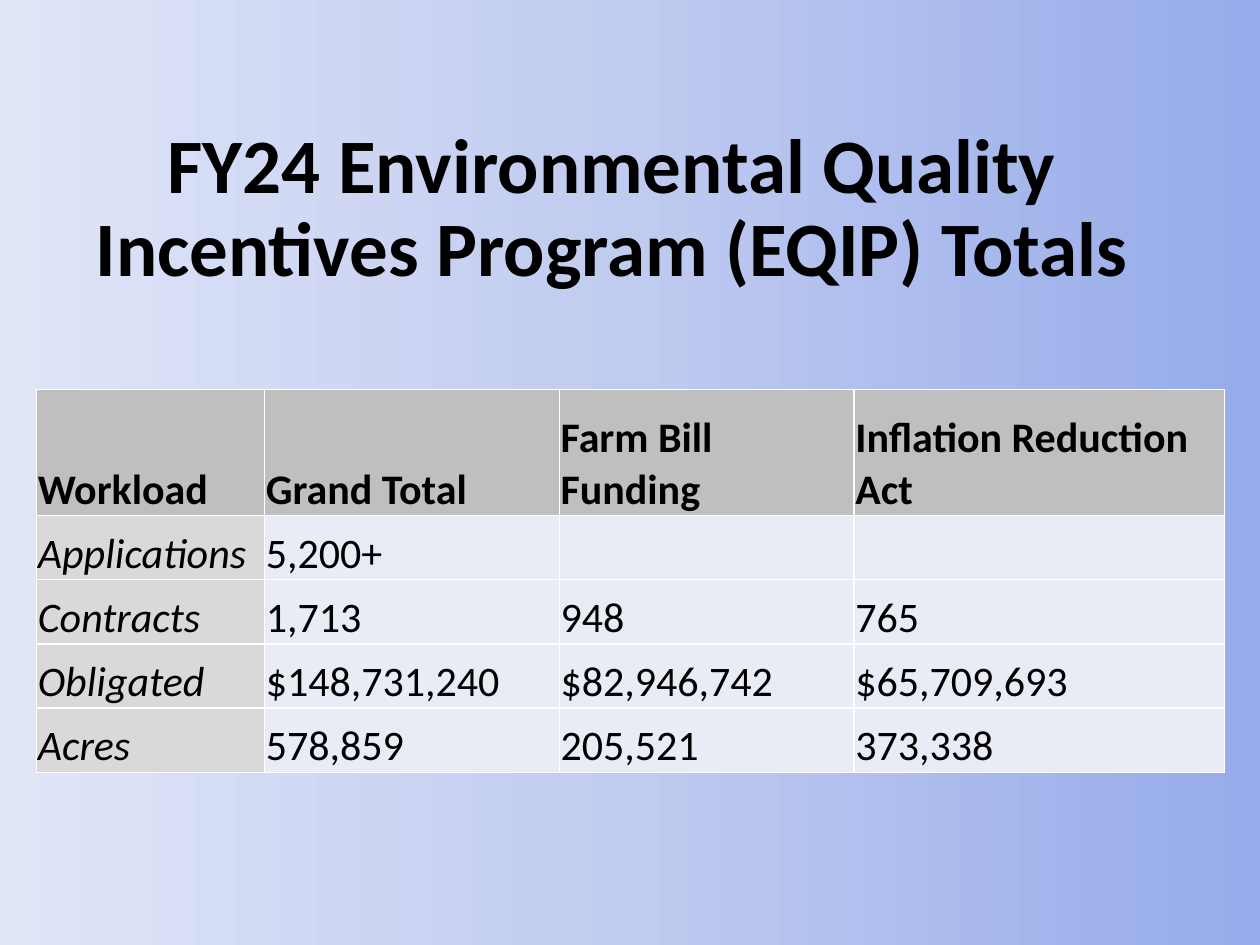
from copy import deepcopy
from dataclasses import dataclass

from pptx import Presentation
from pptx.dml.color import RGBColor
from pptx.enum.text import MSO_ANCHOR, PP_ALIGN
from pptx.oxml import parse_xml
from pptx.oxml.ns import nsdecls, qn
from pptx.util import Inches, Pt

MIDDLE, BOTTOM = MSO_ANCHOR.MIDDLE, MSO_ANCHOR.BOTTOM
CENTER = PP_ALIGN.CENTER


@dataclass(frozen=True)
class Theme:
    font: str = "Calibri"
    title_size: int = 44
    table_size: int = 24
    ink: str = "000000"
    header: str = "BFBFBF"
    label: str = "D9D9D9"
    body: str = "E9EBF5"
    border: str = "FFFFFF"
    gradient: tuple = ((0, "96ABEA"), (0.5, "C0CBF0"), (1, "E0E5F7"))


class SlideBuilder:
    """Draws styled elements on the current slide."""

    def __init__(self, page, theme):
        self.page = page
        self.theme = theme

    def background(self):
        fill = self.page.background.fill
        fill.gradient()
        fill.gradient_angle = 180
        stop_list = self.page.element.find(".//" + qn("a:gsLst"))
        stop_list.insert(1, deepcopy(stop_list[0]))
        for stop, (position, color) in zip(fill.gradient_stops, self.theme.gradient):
            stop.position = position
            stop.color.rgb = RGBColor.from_string(color)

    def style(self, para, size, bold=False, italic=False):
        font = para.font
        font.name, font.size = self.theme.font, Pt(size)
        font.bold, font.italic = bold, italic
        font.color.rgb = RGBColor.from_string(self.theme.ink)

    def title(self, text, left, top, width, height):
        box = self.page.shapes.add_textbox(
            Inches(left), Inches(top), Inches(width), Inches(height))
        frame = box.text_frame
        frame.word_wrap = True
        frame.vertical_anchor = MIDDLE
        para = frame.paragraphs[0]
        para.text = text
        para.alignment = CENTER
        para.line_spacing = 0.9
        self.style(para, self.theme.title_size, bold=True)

    def borders(self, cell):
        properties = cell._tc.get_or_add_tcPr()
        for index, side in enumerate(("lnL", "lnR", "lnT", "lnB")):
            properties.insert(index, parse_xml(
                f'<a:{side} {nsdecls("a")} w="{Pt(1)}"><a:solidFill>'
                f'<a:srgbClr val="{self.theme.border}"/></a:solidFill></a:{side}>'))

    def cell(self, cell, text, is_header, is_label):
        theme = self.theme
        color = theme.header if is_header else theme.label if is_label else theme.body
        cell.fill.solid()
        cell.fill.fore_color.rgb = RGBColor.from_string(color)
        cell.vertical_anchor = BOTTOM
        cell.margin_left = cell.margin_right = cell.margin_top = Inches(0.01)
        cell.margin_bottom = 0
        para = cell.text_frame.paragraphs[0]
        para.text = text
        self.style(para, theme.table_size, bold=is_header,
                   italic=is_label and not is_header)
        self.borders(cell)

    def table(self, rows, left, top, widths, heights):
        table = self.page.shapes.add_table(
            len(rows), len(widths), Inches(left), Inches(top),
            Inches(sum(widths)), Inches(sum(heights))).table
        for column, width in zip(table.columns, widths):
            column.width = Inches(width)
        for row, height in zip(table.rows, heights):
            row.height = Inches(height)
        for r, values in enumerate(rows):
            for c, text in enumerate(values):
                self.cell(table.cell(r, c), text, r == 0, c == 0)


def main():
    deck = Presentation()
    deck.slide_width, deck.slide_height = Inches(10), Inches(7.5)
    builder = SlideBuilder(deck.slides.add_slide(deck.slide_layouts[6]), Theme())
    builder.background()
    builder.title("FY24 Environmental Quality Incentives Program (EQIP) Totals",
                  0.41, 0.93, 8.9, 1.47)
    totals = [
        ("Workload", "Grand Total", "Farm Bill Funding", "Inflation Reduction Act"),
        ("Applications", "5,200+", "", ""),
        ("Contracts", "1,713", "948", "765"),
        ("Obligated", "$148,731,240", "$82,946,742", "$65,709,693"),
        ("Acres", "578,859", "205,521", "373,338"),
    ]
    builder.table(totals, 0.29, 3.09, (1.81, 2.34, 2.34, 2.94), [1] + [0.51] * 4)
    deck.save("out.pptx")


if __name__ == "__main__":
    main()
